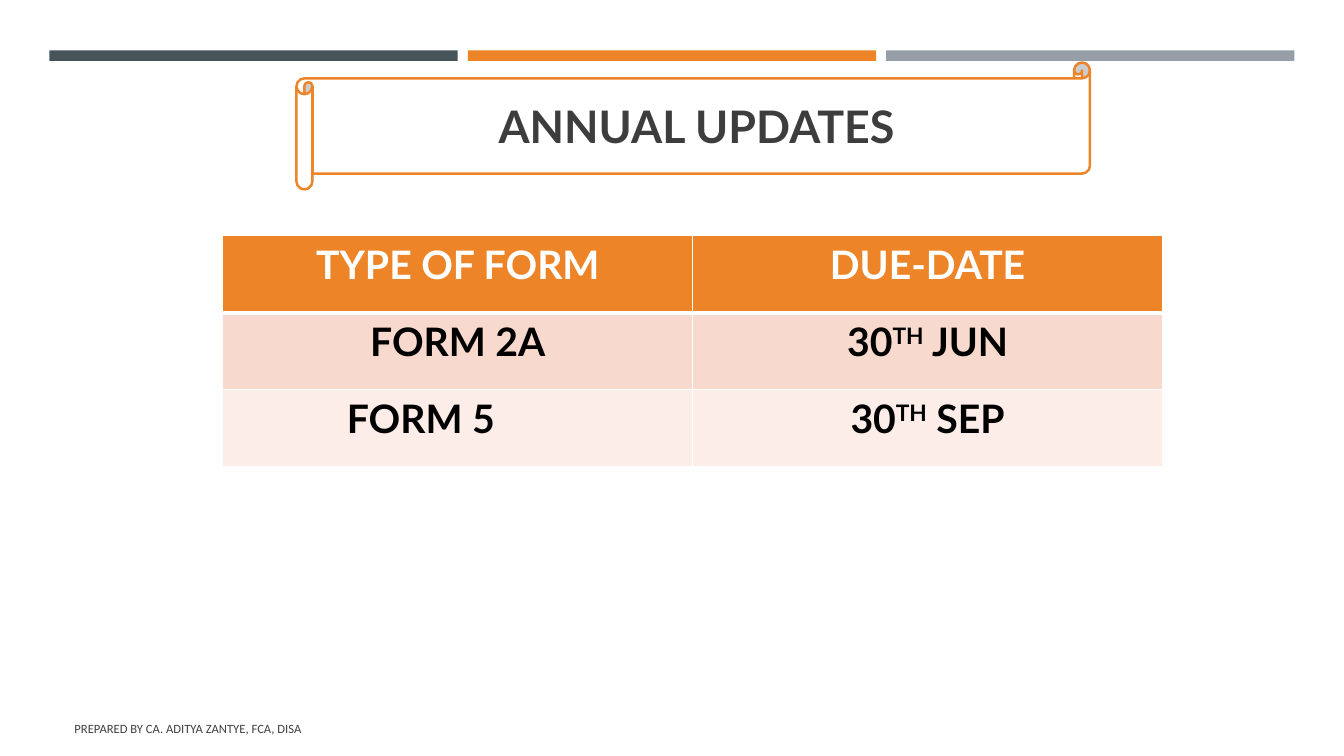
from lxml.etree import SubElement as Sub
from pptx import Presentation
from pptx.dml.color import RGBColor as RGB
from pptx.enum.shapes import MSO_SHAPE as SHAPE
from pptx.enum.text import MSO_ANCHOR as ANCHOR, MSO_AUTO_SIZE as AUTO, PP_ALIGN as ALIGN
from pptx.oxml.ns import qn
from pptx.util import Inches, Pt

COLORS = {
    "slate": "465359", "orange": "ED8428", "grey": "969FA7", "white": "FFFFFF",
    "title": "3D3D3D", "footer": "404040", "black": "000000",
    "band1": "F8D9CD", "band2": "FCEDE8",
}
WIDTH, HEIGHT = Inches(13.33), Inches(7.5)
ROWS = [
    ["TYPE OF FORM", "DUE-DATE"],
    ["FORM 2A", ("30", "TH", " JUN")],
    ["FORM 5", ("30", "TH", " SEP")],
]
ROW_STYLES = [("orange", "white"), ("band1", "black"), ("band2", "black")]


def color(name):
    """Return the named colour."""
    return RGB.from_string(COLORS[name])


def box(x, y, w, h):
    """Turn percentages of the slide into lengths."""
    return [int(v * side / 100) for v, side in zip((x, y, w, h), (WIDTH, HEIGHT) * 2)]


def style_runs(p, size, ink, font="Lato", bold=True):
    """Format all runs of a paragraph."""
    for r in p.runs:
        r.font.size, r.font.name, r.font.bold = Pt(size), font, bold
        r.font.color.rgb = color(ink)


def add_block(s, kind, area, fill, line=None):
    """Add a filled shape with an optional outline."""
    sp = s.shapes.add_shape(kind, *box(*area))
    sp.shadow.inherit = False
    sp.fill.solid()
    sp.fill.fore_color.rgb = color(fill)
    if line:
        sp.line.color.rgb = color(line)
        sp.line.width = Pt(1.75)
    else:
        sp.line.fill.background()


def set_title(s, text, area):
    """Move, fill and format the title placeholder."""
    sp = s.shapes.title
    sp.left, sp.top, sp.width, sp.height = box(*area)
    tf = sp.text_frame
    tf.text = text
    tf.auto_size, tf.vertical_anchor = AUTO.NONE, ANCHOR.MIDDLE
    tf.paragraphs[0].alignment = ALIGN.CENTER
    style_runs(tf.paragraphs[0], 32, "title")


def add_footer(s, text, area):
    """Add the footer line."""
    tf = s.shapes.add_textbox(*box(*area)).text_frame
    tf.word_wrap, tf.vertical_anchor = True, ANCHOR.MIDDLE
    tf.text = text
    style_runs(tf.paragraphs[0], 9, "footer", "Calibri", False)


def set_borders(cell, top, bottom):
    """Draw white cell borders with the given top and bottom widths."""
    tc_pr = cell._tc.get_or_add_tcPr()
    for i, (side, width) in enumerate(zip("LRTB", (1, 1, top, bottom))):
        ln = tc_pr.makeelement(qn("a:ln" + side), {"w": str(Pt(width))})
        Sub(Sub(ln, qn("a:solidFill")), qn("a:srgbClr"), val=COLORS["white"])
        tc_pr.insert(i, ln)


def fill_cell(cell, content, fill, ink):
    """Write and format one cell, raising the middle part of a date."""
    p = cell.text_frame.paragraphs[0]
    if isinstance(content, tuple):
        for part in content:
            p.add_run().text = part
        p.runs[1]._r.get_or_add_rPr().set("baseline", "30000")
    else:
        p.text = content
    p.alignment = ALIGN.CENTER
    style_runs(p, 28, ink)
    cell.fill.solid()
    cell.fill.fore_color.rgb = color(fill)


def add_due_dates(s, area):
    """Add the table of forms and due dates."""
    table = s.shapes.add_table(len(ROWS), len(ROWS[0]), *box(*area)).table
    for i, (row, (fill, ink)) in enumerate(zip(ROWS, ROW_STYLES)):
        for j, content in enumerate(row):
            cell = table.cell(i, j)
            fill_cell(cell, content, fill, ink)
            set_borders(cell, 3 if i == 1 else 1, 3 if i == 0 else 1)
    form5 = table.cell(2, 0)
    form5.margin_left = Inches(1.23)
    form5.text_frame.paragraphs[0].alignment = ALIGN.LEFT


def main():
    """Build the slide."""
    prs = Presentation()
    prs.slide_width, prs.slide_height = WIDTH, HEIGHT
    s = prs.slides.add_slide(prs.slide_layouts[5])
    for i, fill in enumerate(("slate", "orange", "grey")):
        add_block(s, SHAPE.RECTANGLE, (3.68 + 31.13 * i, 6.67, 30.38, 1.4), fill)
    add_footer(s, "PREPARED BY CA. ADITYA ZANTYE, FCA, DISA", (4.8, 93.73, 56.71, 5.33))
    add_block(s, SHAPE.HORIZONTAL_SCROLL, (22.06, 8.27, 59.04, 16.8), "white", "orange")
    set_title(s, "ANNUAL UPDATES", (22.66, 8.27, 58.36, 16.8))
    s.shapes._spTree.append(s.shapes.title._element)
    add_due_dates(s, (16.58, 31.2, 69.92, 30.53))
    prs.save("out.pptx")


if __name__ == "__main__":
    main()
